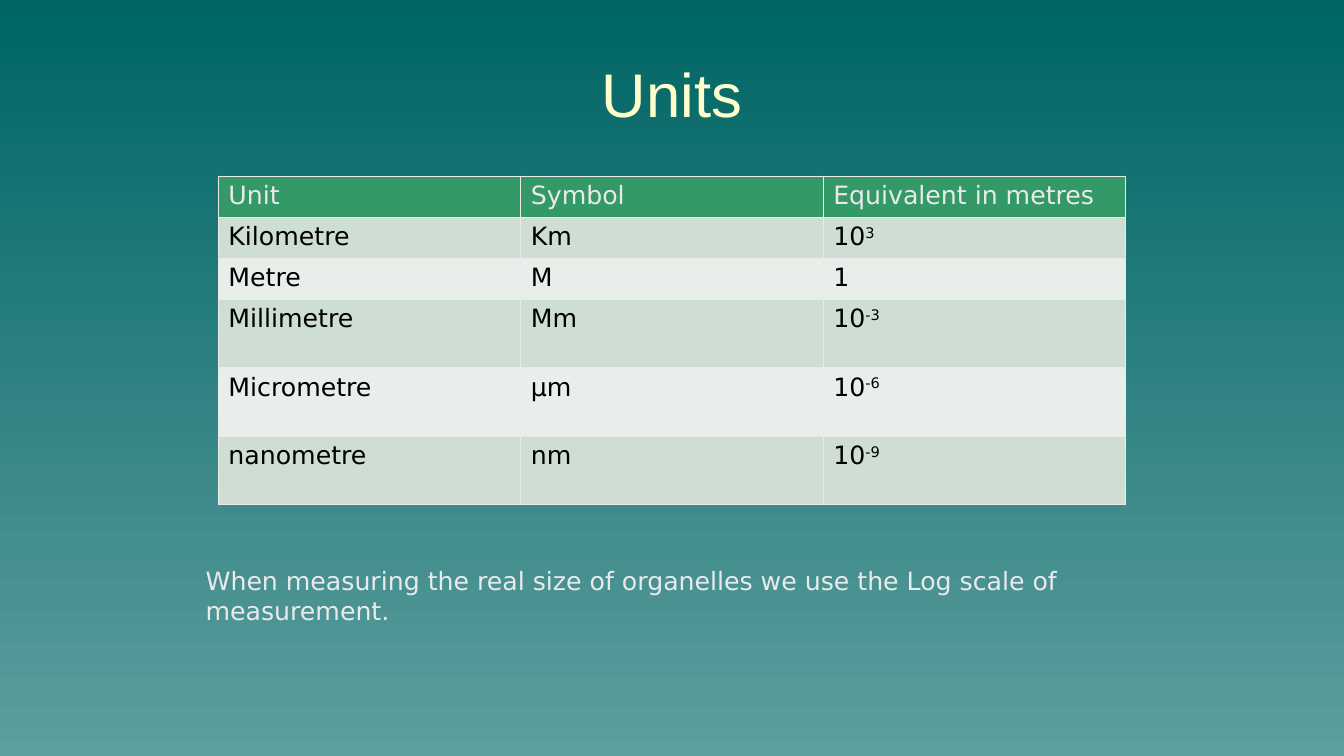
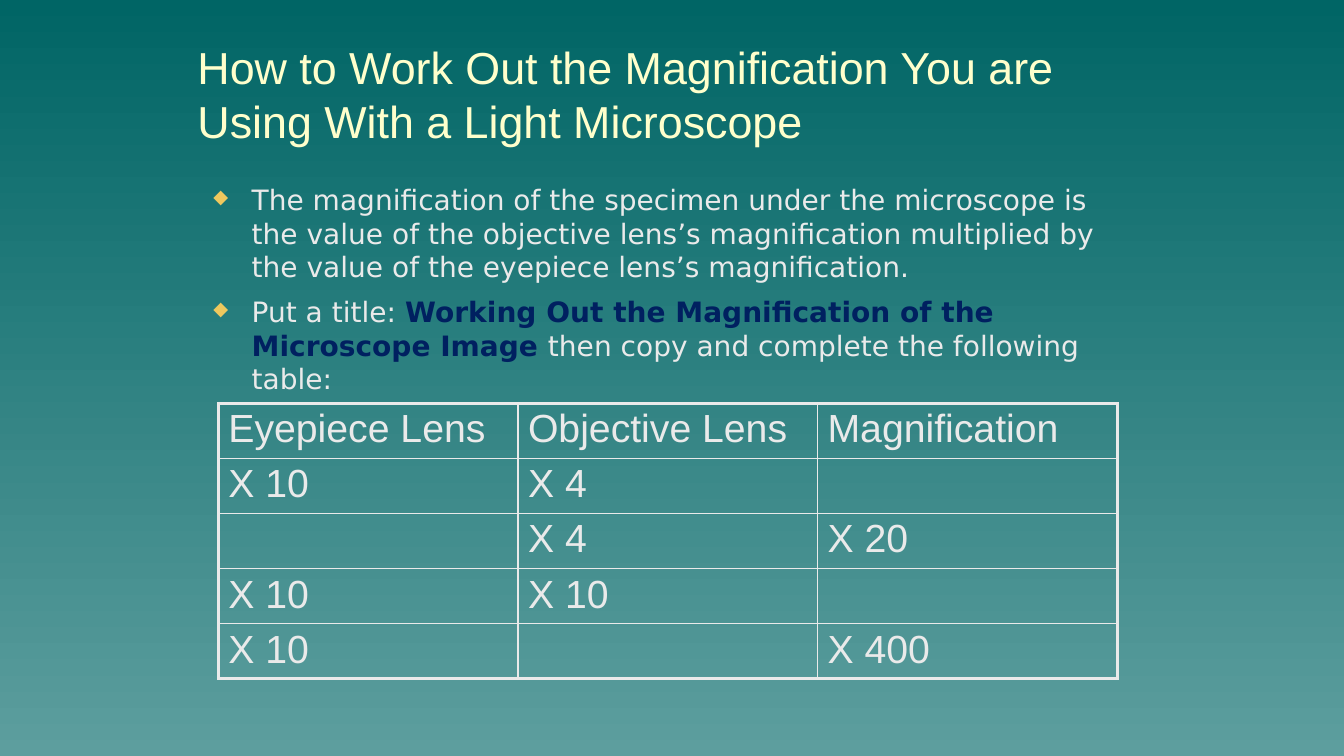
"""Build two slides on units of length and microscope magnification."""
from dataclasses import dataclass
from typing import NamedTuple

from lxml.etree import SubElement
from pptx import Presentation
from pptx.dml.color import RGBColor
from pptx.enum.text import MSO_ANCHOR as Anchor, MSO_AUTO_SIZE as AutoSize, PP_ALIGN as Align
from pptx.oxml.ns import qn
from pptx.util import Emu, Inches, Pt

WIDTH, HEIGHT = Inches(13.33), Inches(7.5)
COLUMNS, ROWS = 160, 90
SKY, SEA = "006565", "5D9E9E"
CREAM, PALE, NAVY, GOLD, BLACK = "FFFFCC", "EAEAEA", "002060", "EEC85E", "000000"
GREEN, DARK_BAND, LIGHT_BAND = "339966", "CEDED3", "E8EFEA"
HEADING_FONT, BODY_FONT = "Arial", "DejaVu Sans"
THIN, THICK = 1, 2.25


class Area(NamedTuple):
    """A rectangle in grid columns and rows."""
    left: float
    top: float
    width: float
    height: float


@dataclass(frozen=True)
class TextStyle:
    """Font, size and colour of a text."""
    font: str
    size: float
    color: str


@dataclass(frozen=True)
class Span:
    """A stretch of text that may differ from its paragraph."""
    text: str
    color: str | None = None
    bold: bool = False
    raised: bool = False


@dataclass(frozen=True)
class TableLook:
    """Fills, text styles, rim width and cell margin of a table."""
    header: TextStyle
    body: TextStyle
    fills: tuple
    rim: float
    margin: float


NOTE = TextStyle(BODY_FONT, 18, PALE)
BULLET = TextStyle(BODY_FONT, 20, PALE)
LENS = TextStyle(HEADING_FONT, 28, PALE)
UNIT_LOOK = TableLook(NOTE, TextStyle(BODY_FONT, 18, BLACK),
                      (GREEN, DARK_BAND, LIGHT_BAND), THIN, 0.05)
LENS_LOOK = TableLook(LENS, LENS, (), THICK, 0.04)

UNITS = [
    ("Unit", "Symbol", "Equivalent in metres"),
    ("Kilometre", "Km", "10^3"),
    ("Metre", "M", "1"),
    ("Millimetre", "Mm", "10^-3"),
    ("Micrometre", "µm", "10^-6"),
    ("nanometre", "nm", "10^-9"),
]
LENSES = [
    ("Eyepiece Lens", "Objective Lens", "Magnification"),
    ("X 10", "X 4", ""),
    ("", "X 4", "X 20"),
    ("X 10", "X 10", ""),
    ("X 10", "", "X 400"),
]
INSTRUCTIONS = [
    [Span("The magnification of the specimen under the microscope is the value of the "
          "objective lens’s magnification multiplied by the value of the eyepiece "
          "lens’s magnification.")],
    [Span("Put a title: "),
     Span("Working Out the Magnification of the Microscope Image ", NAVY, True),
     Span("then copy and complete the following table:")],
]


def rgb(color: str) -> RGBColor:
    """Turn a hex string into a colour."""
    return RGBColor.from_string(color)


def across(columns: float) -> Emu:
    """Length of a number of grid columns."""
    return Emu(round(WIDTH * columns / COLUMNS))


def down(rows: float) -> Emu:
    """Length of a number of grid rows."""
    return Emu(round(HEIGHT * rows / ROWS))


def frame_of(area: Area) -> tuple:
    """Left, top, width and height of an area."""
    return across(area.left), down(area.top), across(area.width), down(area.height)


def format_run(run, style: TextStyle, span: Span) -> None:
    """Apply a style and the span's differences to a run."""
    run.font.name, run.font.size, run.font.bold = style.font, Pt(style.size), span.bold
    run.font.color.rgb = rgb(span.color or style.color)
    if span.raised:
        run._r.get_or_add_rPr().set("baseline", "30000")


def write_spans(para, spans: list, style: TextStyle) -> None:
    """Write the spans into a paragraph."""
    for span in spans:
        run = para.add_run()
        run.text = span.text
        format_run(run, style, span)


def set_insets(text_frame, left: float, right: float, edge: float) -> None:
    """Set the inner margins of a text frame in inches."""
    text_frame.margin_left, text_frame.margin_right = Inches(left), Inches(right)
    text_frame.margin_top = text_frame.margin_bottom = Inches(edge)


def add_page(deck, title: str, area: Area, size: float, align: Align):
    """Add a slide with a formatted title."""
    page = deck.slides.add_slide(deck.slide_layouts[5])
    box = page.shapes.title
    box.left, box.top, box.width, box.height = frame_of(area)
    frame = box.text_frame
    frame.text = title
    frame.word_wrap, frame.auto_size = True, AutoSize.NONE
    frame.vertical_anchor = Anchor.MIDDLE
    set_insets(frame, 0.1, 0.1, 0.06)
    para = frame.paragraphs[0]
    para.alignment = align
    format_run(para.runs[0], TextStyle(HEADING_FONT, size, CREAM), Span(title))
    return page


def add_text(page, area: Area):
    """Add a wrapping text box and return its frame."""
    frame = page.shapes.add_textbox(*frame_of(area)).text_frame
    frame.word_wrap = True
    return frame


def add_bullet(para) -> None:
    """Give a paragraph a hanging gold diamond."""
    props = para._p.get_or_add_pPr()
    props.set("marL", str(Inches(0.42)))
    props.set("indent", str(Inches(-0.38)))
    SubElement(SubElement(props, qn("a:buClr")), qn("a:srgbClr")).set("val", GOLD)
    SubElement(props, qn("a:buSzPct")).set("val", "69000")
    SubElement(props, qn("a:buChar")).set("char", "◆")


def set_borders(cell, widths: dict) -> None:
    """Draw the four cell borders ahead of the fill."""
    props = cell._tc.get_or_add_tcPr()
    for position, (side, width) in enumerate(widths.items()):
        line = SubElement(props, qn(f"a:ln{side}"))
        line.set("w", str(Pt(width)))
        fill = SubElement(line, qn("a:solidFill"))
        SubElement(fill, qn("a:srgbClr")).set("val", PALE)
        props.insert(position, line)


def cell_spans(text: str) -> list:
    """Split a power into its base and raised exponent."""
    base, _, exponent = text.partition("^")
    return [Span(base)] * bool(base) + [Span(exponent, raised=True)] * bool(exponent)


def add_grid(page, area: Area, heights: list, content: list, look: TableLook) -> None:
    """Add a table with equal columns and the given row heights."""
    last_row, last_column = len(content) - 1, len(content[0]) - 1
    table = page.shapes.add_table(last_row + 1, last_column + 1, *frame_of(area)).table
    table.first_row = table.horz_banding = False
    for row, height in zip(table.rows, heights):
        row.height = down(height)
    for r, texts in enumerate(content):
        for c, text in enumerate(texts):
            cell = table.cell(r, c)
            set_insets(cell, 0.1, 0.1, look.margin)
            if look.fills:
                header, *bands = look.fills
                cell.fill.solid()
                cell.fill.fore_color.rgb = rgb(bands[(r - 1) % 2] if r else header)
            else:
                cell.fill.background()
            on_rim = {"L": c == 0, "R": c == last_column, "T": r == 0, "B": r == last_row}
            set_borders(cell, {side: look.rim if rim else THIN for side, rim in on_rim.items()})
            style = look.body if r else look.header
            write_spans(cell.text_frame.paragraphs[0], cell_spans(text), style)


def set_background(deck) -> None:
    """Give every slide the same vertical gradient."""
    fill = deck.slide_master.background.fill
    fill.gradient()
    fill.gradient_angle = 270
    for stop, color in zip(fill.gradient_stops, (SKY, SEA)):
        stop.color.rgb = rgb(color)


def add_units(deck) -> None:
    """Add the slide on units of length."""
    page = add_page(deck, "Units", Area(8, 1.2, 144, 19.8), 44, Align.CENTER)
    heights = [4.88] * 3 + [8.15] * 3
    add_grid(page, Area(26, 21, 108, sum(heights)), heights, UNITS, UNIT_LOOK)
    note = add_text(page, Area(23.3, 66.7, 111.5, 8.5))
    note.text = "When measuring the real size of organelles we use the Log scale of measurement."
    format_run(note.paragraphs[0].runs[0], NOTE, Span(note.text))


def add_magnification(deck) -> None:
    """Add the slide on working out magnification."""
    title = "How to Work Out the Magnification You are Using With a Light Microscope"
    page = add_page(deck, title, Area(22.3, 3.6, 115.3, 15), 32, Align.LEFT)
    frame = add_text(page, Area(24.2, 21, 111.5, 59.4))
    set_insets(frame, 0.06, 0.1, 0.06)
    for index, spans in enumerate(INSTRUCTIONS):
        para = frame.add_paragraph() if index else frame.paragraphs[0]
        add_bullet(para)
        para.space_before = Pt(8 if index else 0)
        write_spans(para, spans, BULLET)
    heights = [6.4] * len(LENSES)
    add_grid(page, Area(26, 48, 107, sum(heights)), heights, LENSES, LENS_LOOK)


def main() -> None:
    """Build and save the deck."""
    deck = Presentation()
    deck.slide_width, deck.slide_height = WIDTH, HEIGHT
    set_background(deck)
    add_units(deck)
    add_magnification(deck)
    deck.save("out.pptx")


if __name__ == "__main__":
    main()
